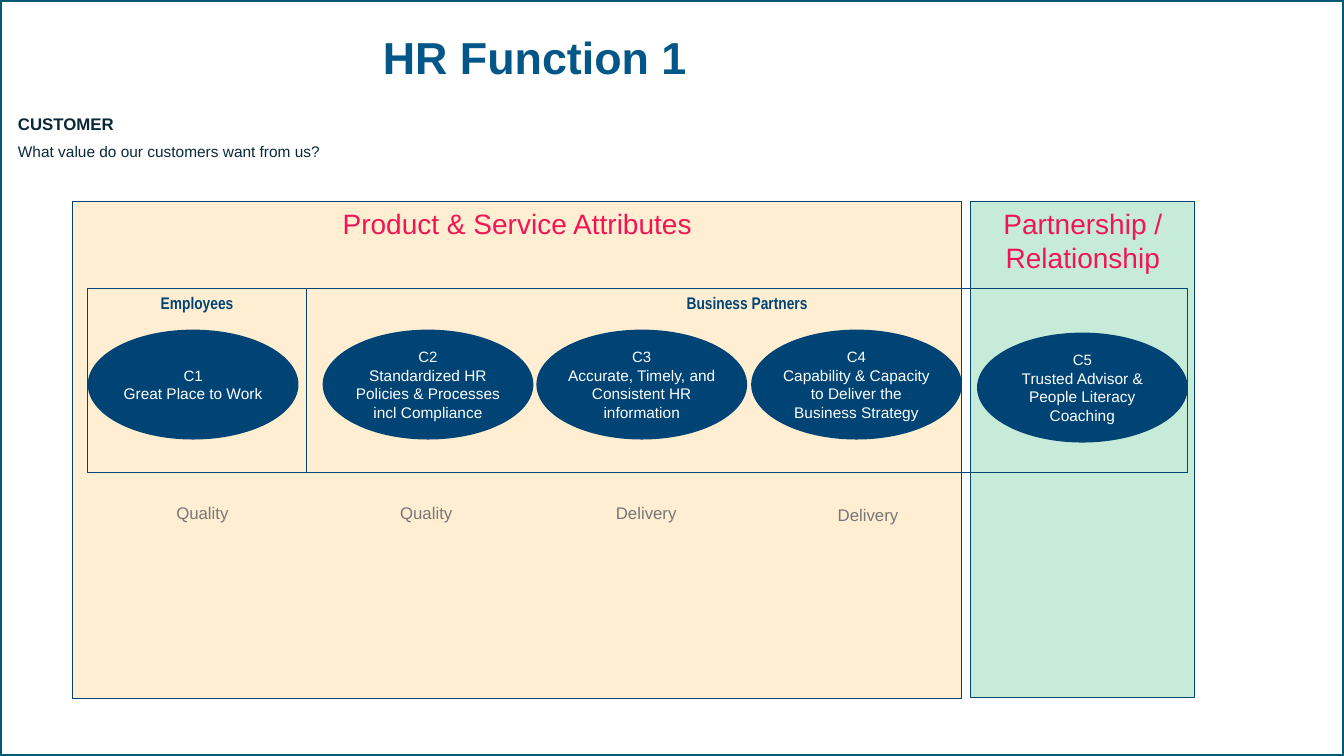
import pptx
import pptx.dml.color
import pptx.enum.shapes
import pptx.enum.text
import pptx.oxml
import pptx.oxml.ns
import pptx.util
from dataclasses import dataclass

Inches = pptx.util.Inches
Pt = pptx.util.Pt
SHAPE = pptx.enum.shapes.MSO_SHAPE
ALIGN = pptx.enum.text.PP_ALIGN
ANCHOR = pptx.enum.text.MSO_ANCHOR


@dataclass(frozen=True)
class Theme:
    font: str = "Arial"
    narrow: str = "Arial Narrow"
    title: str = "025788"
    frame: str = "025877"
    navy: str = "004475"
    orange: str = "FFAA1B"
    mint: str = "C7EBD9"
    pink: str = "F11653"
    grey: str = "767779"
    ink: str = "092939"
    white: str = "FFFFFF"
    title_size: float = 32
    panel_size: float = 20
    label_size: float = 12
    body_size: float = 11
    code_size: float = 10.7
    frame_width: float = 3
    line_width: float = 0.75


def rgb(color):
    return pptx.dml.color.RGBColor.from_string(color)


class Slide:
    def __init__(self, prs, theme):
        self.theme = theme
        self.s = prs.slides.add_slide(prs.slide_layouts[6])

    def set_lines(self, tf, lines, color, sizes, font=None, bold=False, align=ALIGN.CENTER):
        """Fill a text frame with one paragraph per line and one size per line."""
        tf.text = "\n".join(lines)
        for p, size in zip(tf.paragraphs, sizes):
            p.alignment = align
            for r in p.runs:
                r.font.name = font or self.theme.font
                r.font.size = Pt(size)
                r.font.bold = bold
                r.font.color.rgb = rgb(color)

    def shape(self, kind, box, fill=None, line=None, width=None, opacity=None):
        """Add a preset shape; opacity is a percentage of the fill."""
        sp = self.s.shapes.add_shape(kind, *map(Inches, box))
        sp.shadow.inherit = False
        if fill:
            sp.fill.solid()
            sp.fill.fore_color.rgb = rgb(fill)
        else:
            sp.fill.background()
        if opacity:
            clr = sp.element.spPr.find(".//" + pptx.oxml.ns.qn("a:srgbClr"))
            clr.append(pptx.oxml.parse_xml(
                f'<a:alpha {pptx.oxml.ns.nsdecls("a")} val="{opacity * 1000}"/>'))
        if line:
            sp.line.color.rgb = rgb(line)
            sp.line.width = Pt(width or self.theme.line_width)
        else:
            sp.line.fill.background()
        return sp

    def headed_box(self, box, heading, color, size, font=None, bold=False, **fill):
        sp = self.shape(SHAPE.RECTANGLE, box, line=self.theme.navy, **fill)
        sp.text_frame.vertical_anchor = ANCHOR.TOP
        self.set_lines(sp.text_frame, [heading], color, [size], font, bold)

    def objective(self, left, top, code, name):
        t = self.theme
        sp = self.shape(SHAPE.OVAL, (left, top, 2.09, 1.09), fill=t.navy)
        tf = sp.text_frame
        tf.margin_left = tf.margin_right = 0
        tf.vertical_anchor = ANCHOR.MIDDLE
        self.set_lines(tf, [code, name], t.white, [t.code_size, t.body_size])

    def text(self, box, lines, color, sizes, wrap=True, **style):
        tf = self.s.shapes.add_textbox(*map(Inches, box)).text_frame
        tf.word_wrap = wrap
        self.set_lines(tf, lines, color, sizes, **style)
        return tf


def main():
    prs = pptx.Presentation()
    prs.slide_width, prs.slide_height = Inches(13.33), Inches(7.5)
    t = Theme()
    s = Slide(prs, t)

    s.shape(SHAPE.RECTANGLE, (0, 0, 13.33, 7.5), line=t.frame, width=t.frame_width)
    s.headed_box((9.63, 2, 2.22, 4.92), "Partnership / Relationship",
                 t.pink, t.panel_size, fill=t.mint)
    s.headed_box((0.72, 2, 8.82, 4.93), "Product & Service Attributes",
                 t.pink, t.panel_size, fill=t.orange, opacity=20)

    tf = s.text((0.37, 0.28, 9.87, 0.64), ["HR Function 1"], t.title, [t.title_size], bold=True)
    tf.vertical_anchor = ANCHOR.MIDDLE
    tf.paragraphs[0].line_spacing = 0.9

    objectives = [
        (0.87, 3.27, "Great Place to Work"),
        (3.2, 3.27, "Standardized HR Policies & Processes incl Compliance"),
        (5.32, 3.27, "Accurate, Timely, and Consistent HR information"),
        (7.45, 3.27, "Capability & Capacity to Deliver the Business Strategy"),
        (9.69, 3.3, "Trusted Advisor & People Literacy Coaching"),
    ]
    for number, (left, top, name) in enumerate(objectives, 1):
        s.objective(left, top, f"C{number}", name)

    measures = [(1.65, 4.94, 0.72, "Quality"), (3.87, 4.94, 0.72, "Quality"),
                (6.01, 4.94, 0.81, "Delivery"), (8.21, 4.96, 0.81, "Delivery")]
    for left, top, width, name in measures:
        s.text((left, top, width, 0.3), [name], t.grey, [t.label_size],
               wrap=False, align=ALIGN.LEFT)

    for left, width, group in [(0.87, 2.17, "Employees"), (3.04, 8.74, "Business Partners")]:
        s.headed_box((left, 2.86, width, 1.83), group, t.navy, t.label_size, t.narrow, True)

    tf = s.text((0.08, 1.08, 5.94, 0.58),
                ["CUSTOMER", "What value do our customers want from us?"],
                t.ink, [t.label_size, t.body_size], align=ALIGN.LEFT)
    tf.paragraphs[0].runs[0].font.bold = True
    tf.paragraphs[1].space_before = Pt(6)

    prs.save("out.pptx")


if __name__ == "__main__":
    main()
